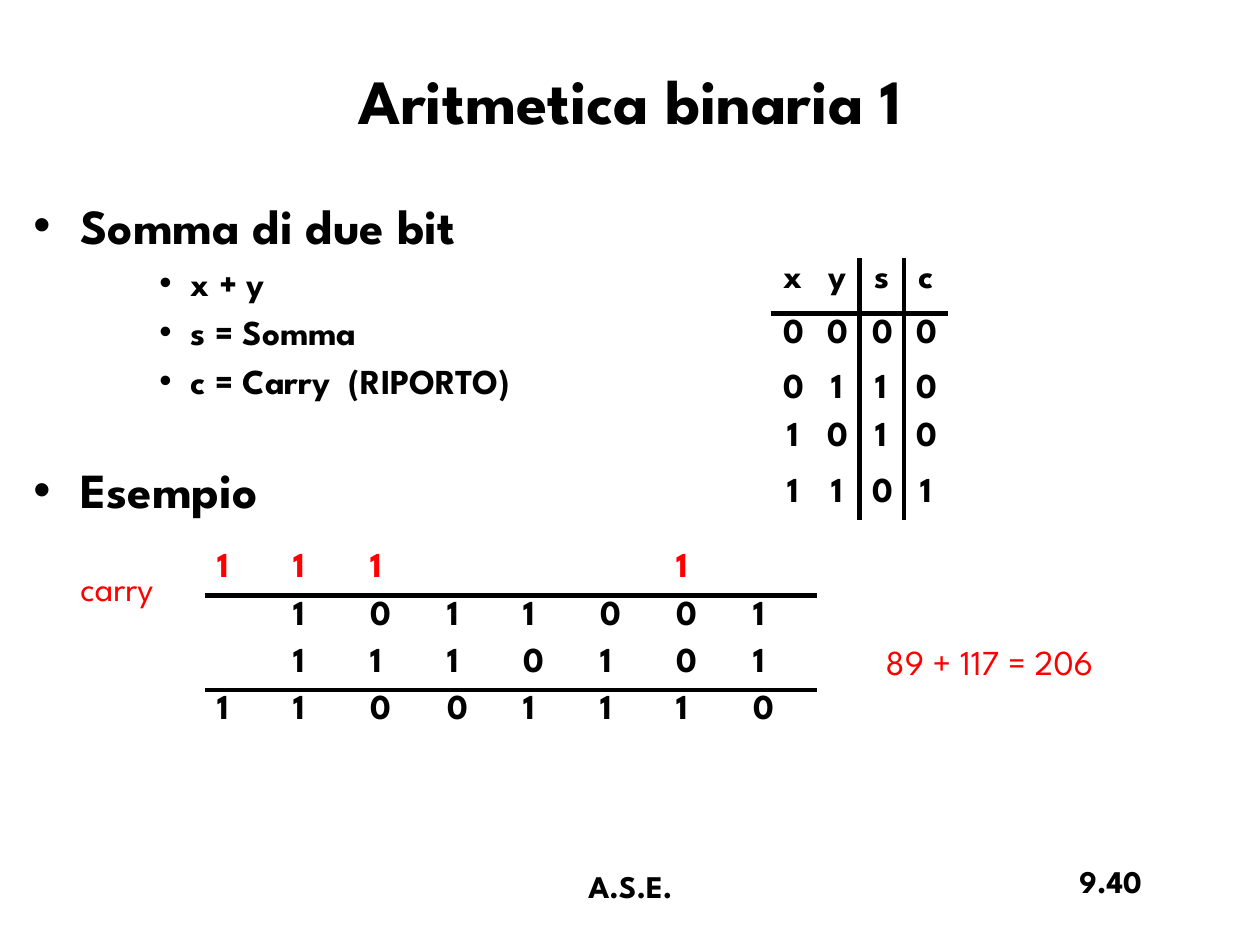
from lxml import etree
from pptx import Presentation
from pptx.dml.color import RGBColor
from pptx.enum.text import MSO_ANCHOR, PP_ALIGN
from pptx.oxml.ns import qn
from pptx.util import Pt

LEFT, CENTER, RIGHT = PP_ALIGN.LEFT, PP_ALIGN.CENTER, PP_ALIGN.RIGHT
MIDDLE = MSO_ANCHOR.MIDDLE
FONT = "League Spartan"
BLACK = RGBColor(0, 0, 0)
RED = RGBColor(255, 0, 0)
BORDER_WIDTH = 3
CELL_TOP = 3

TITLE = "Aritmetica binaria 1"
# text, size, left margin, hanging indent, space before
OUTLINE = [
    ("Somma di due bit", 28, 27, 27, 5.6),
    ("x + y", 20, 90, 18, 4),
    ("s = Somma", 20, 90, 18, 4),
    ("c = Carry  (RIPORTO)", 20, 90, 18, 4),
    ("Esempio", 28, 27, 27, 33.5),
]
TRUTH_TABLE = ["xysc", "0000", "0110", "1010", "1101"]
ADDITION = ["111   1 ", " 1011001", " 1110101", "11001110"]
# text, (left, top, width, height), size, colour, bold, alignment, wrap
LABELS = [
    ("carry", (38.9, 320.4, 67, 31), 20, RED, False, LEFT, False),
    ("89 + 117 = 206", (499, 362.2, 152.6, 31), 20, RED, False, LEFT, False),
    ("9.40", (509.8, 488.9, 149.8, 36), 18, BLACK, True, RIGHT, True),
    ("A.S.E.", (246.2, 491.8, 228.2, 36), 18, BLACK, True, CENTER, True),
]


def style(p, size, color=BLACK, bold=True, align=LEFT):
    p.alignment = align
    for r in p.runs:
        r.font.name = FONT
        r.font.size = Pt(size)
        r.font.bold = bold
        r.font.color.rgb = color


def place(sp, box):
    sp.left, sp.top, sp.width, sp.height = map(Pt, box)


def add_text(slide, box, wrap=True):
    tf = slide.shapes.add_textbox(*map(Pt, box)).text_frame
    tf.word_wrap = wrap
    return tf


def add_bullet(p, margin, hanging):
    pPr = p._p.get_or_add_pPr()
    pPr.set("marL", str(Pt(margin)))
    pPr.set("indent", str(-Pt(hanging)))
    etree.SubElement(pPr, qn("a:buFont")).set("typeface", "Arial")
    etree.SubElement(pPr, qn("a:buChar")).set("char", "•")


def set_borders(cell, ruled):
    """Rule the sides marked true and clear the others; sides come in the order L, R, T, B."""
    tcPr = cell._tc.get_or_add_tcPr()
    for i, (side, on) in enumerate(ruled.items()):
        ln = etree.Element(qn(f"a:ln{side}"), w=str(Pt(BORDER_WIDTH)))
        if on:
            fill = etree.SubElement(ln, qn("a:solidFill"))
            etree.SubElement(fill, qn("a:srgbClr")).set("val", str(BLACK))
        else:
            etree.SubElement(ln, qn("a:noFill"))
        tcPr.insert(i, ln)


def add_digits(slide, rows, left, top, col_width, heights, align,
               lines_below, lines_right=(), red_rows=()):
    """Add a table with one character per cell, ruled after the given rows and columns."""
    n_cols = len(rows[0])
    table = slide.shapes.add_table(
        len(rows), n_cols, Pt(left), Pt(top),
        Pt(col_width * n_cols), Pt(sum(heights))).table
    table.first_row = table.horz_banding = False
    for col in table.columns:
        col.width = Pt(col_width)
    for i, (row, height) in enumerate(zip(rows, heights)):
        table.rows[i].height = Pt(height)
        for j, char in enumerate(row):
            cell = table.cell(i, j)
            cell.fill.background()
            set_borders(cell, {"L": j - 1 in lines_right, "R": j in lines_right,
                               "T": i - 1 in lines_below, "B": i in lines_below})
            cell.margin_top, cell.margin_bottom = Pt(CELL_TOP), 0
            if char != " ":
                cell.text = char
                style(cell.text_frame.paragraphs[0], 20,
                      RED if i in red_rows else BLACK, align=align)


prs = Presentation()
prs.slide_width, prs.slide_height = Pt(720), Pt(540)
slide = prs.slides.add_slide(prs.slide_layouts[5])

title = slide.shapes.title
place(title, (12, 12, 696, 90))
title.text_frame.text = TITLE
title.text_frame.vertical_anchor = MIDDLE
style(title.text_frame.paragraphs[0], 36, align=CENTER)

tf = add_text(slide, (12, 108, 696, 372))
for i, (text, size, margin, hanging, before) in enumerate(OUTLINE):
    p = tf.add_paragraph() if i else tf.paragraphs[0]
    p.text = text
    p.space_before = Pt(before)
    style(p, size)
    add_bullet(p, margin, hanging)

add_digits(slide, TRUTH_TABLE, 440.3, 147.6, 25.4, [31.7, 31.7, 27.4, 31.7, 25.6],
           CENTER, lines_below=(0,), lines_right=(1, 2))
add_digits(slide, ADDITION, 117, 313.2, 43.75, [26.8] * 4,
           LEFT, lines_below=(0, 2), red_rows=(0,))

for text, box, size, color, bold, align, wrap in LABELS:
    tf = add_text(slide, box, wrap)
    tf.text = text
    style(tf.paragraphs[0], size, color, bold, align)

prs.save("out.pptx")
